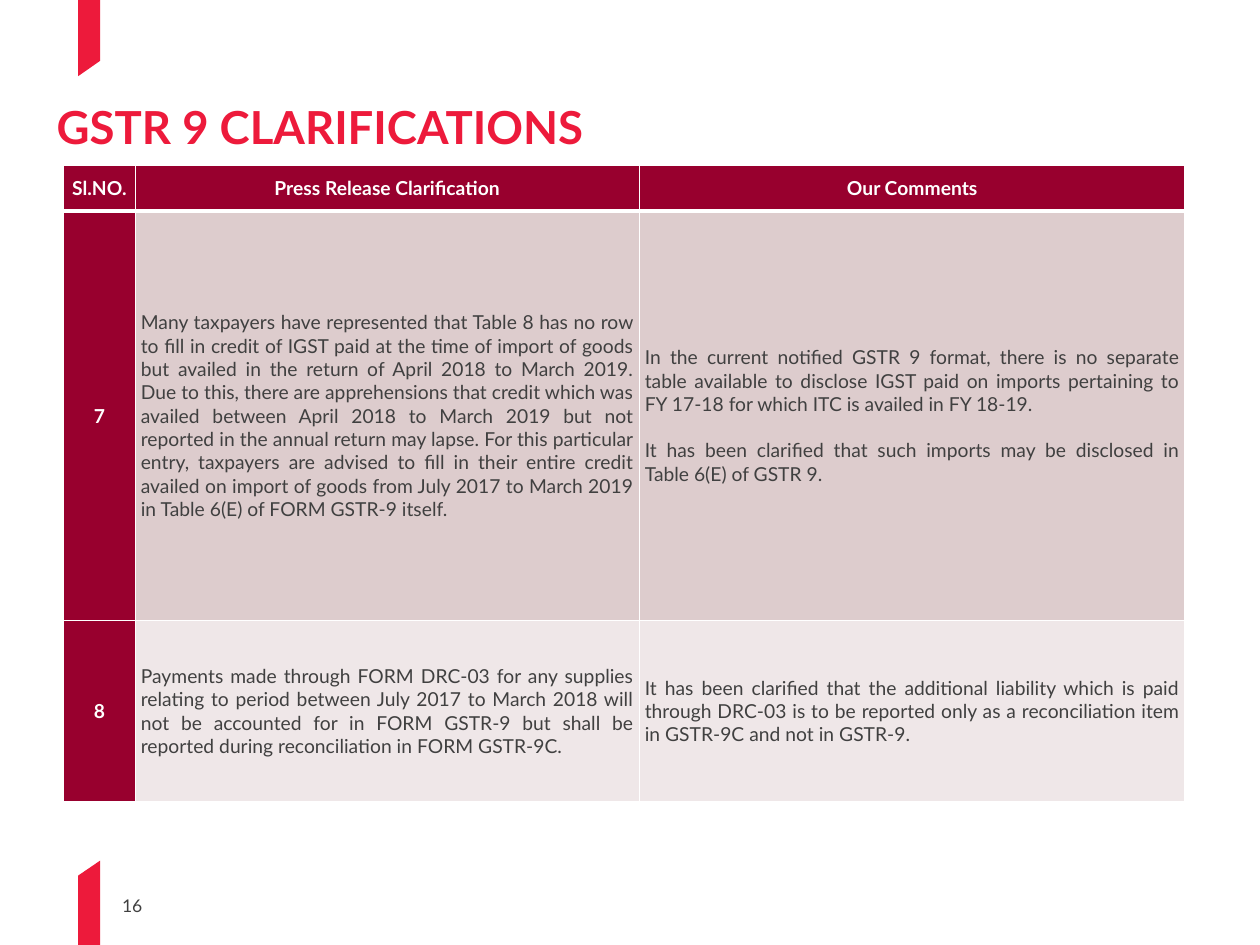
from typing import NamedTuple

from lxml.etree import SubElement
from pptx import Presentation
from pptx.dml.color import RGBColor
from pptx.enum.text import MSO_ANCHOR as Anchor, MSO_AUTO_SIZE as Fit, PP_ALIGN as Align
from pptx.oxml.ns import qn
from pptx.util import Pt

RED = RGBColor(0xED, 0x1A, 0x3B)
WINE = RGBColor(0x98, 0x00, 0x2E)
ROSE = RGBColor(0xDD, 0xCC, 0xCD)
PALE = RGBColor(0xEF, 0xE7, 0xE8)
GREY = RGBColor(0x40, 0x40, 0x40)
WHITE = RGBColor(0xFF, 0xFF, 0xFF)
FONT = "Lato"
SIZE = 11
LINE = 13.2
WIDTHS = (41, 288, 312)


class Row(NamedTuple):
    number: str
    release: list[str]
    comment: list[str]
    height: float
    tint: RGBColor


class Bar(NamedTuple):
    """Accent strip: outer edge, then the slanted edge's left and right ends."""
    edge: float
    left: float
    right: float


HEAD = Row("Sl.NO.", ["Press Release Clarification"], ["Our Comments"], 26, WINE)
ROWS = [
    Row("7",
        ["Many taxpayers have represented that Table 8 has no row to fill in "
         "credit of IGST paid at the time of import of goods but availed in the "
         "return of April 2018 to March 2019. Due to this, there are "
         "apprehensions that credit which was availed between April 2018 to "
         "March 2019 but not reported in the annual return may lapse. For this "
         "particular entry, taxpayers are advised to fill in their entire credit "
         "availed on import of goods from July 2017 to March 2019 in Table 6(E) "
         "of FORM GSTR-9 itself."],
        ["In the current notified GSTR 9 format, there is no separate table "
         "available to disclose IGST paid on imports pertaining to FY 17-18 for "
         "which ITC is availed in FY 18-19.",
         "It has been clarified that such imports may be disclosed in "
         "Table 6(E) of GSTR 9."],
        234, ROSE),
    Row("8",
        ["Payments made through FORM DRC-03 for any supplies relating to period "
         "between July 2017 to March 2018 will not be accounted for in FORM "
         "GSTR-9 but shall be reported during reconciliation in FORM GSTR-9C."],
        ["It has been clarified that the additional liability which is paid "
         "through DRC-03 is to be reported only as a reconciliation item in "
         "GSTR-9C and not in GSTR-9."],
        103.5, PALE),
]
BARS = [Bar(540, 500.4, 491.8), Bar(0, 43.6, 34.8)]


def style(para, size: float, color: RGBColor, bold: bool = False) -> None:
    font = para.font
    font.name, font.size, font.bold = FONT, Pt(size), bold
    font.color.rgb = color


def draw_bar(slide, bar: Bar) -> None:
    left, right = Pt(44.6), Pt(57.2)
    pen = slide.shapes.build_freeform(left, Pt(bar.left))
    pen.add_line_segments([(left, Pt(bar.edge)), (right, Pt(bar.edge)),
                           (right, Pt(bar.right))], close=True)
    shape = pen.convert_to_shape()
    shape.shadow.inherit = False
    shape.fill.solid()
    shape.fill.fore_color.rgb = RED
    shape.line.fill.background()


def add_borders(cell, top: float, bottom: float) -> None:
    """Must run before the cell is filled, as lines precede the fill in XML."""
    props = cell._tc.get_or_add_tcPr()
    for side, width in (("L", 1), ("R", 1), ("T", top), ("B", bottom)):
        line = SubElement(props, qn(f"a:ln{side}"), w=str(Pt(width)))
        fill = SubElement(line, qn("a:solidFill"))
        SubElement(fill, qn("a:srgbClr"), val=str(WHITE))


def fill_cell(cell, texts: list[str], tint: RGBColor, strong: bool) -> None:
    cell.fill.solid()
    cell.fill.fore_color.rgb = tint
    cell.vertical_anchor = Anchor.MIDDLE
    cell.margin_left = cell.margin_right = Pt(3.2)
    cell.margin_top = cell.margin_bottom = 0
    frame = cell.text_frame
    for i, text in enumerate(texts):
        para = frame.add_paragraph() if i else frame.paragraphs[0]
        para.text = text
        para.alignment = Align.CENTER if strong else Align.JUSTIFY
        if i:
            para.space_before = Pt(LINE)
        style(para, SIZE, WHITE if strong else GREY, strong)


def draw_table(slide, rows: list[Row]) -> None:
    high = sum(row.height for row in rows)
    table = slide.shapes.add_table(len(rows), len(WIDTHS), Pt(36.3), Pt(94.5),
                                   Pt(sum(WIDTHS)), Pt(high)).table
    for col, width in zip(table.columns, WIDTHS):
        col.width = Pt(width)
    for r, row in enumerate(rows):
        table.rows[r].height = Pt(row.height)
        for c, texts in enumerate(([row.number], row.release, row.comment)):
            cell = table.cell(r, c)
            add_borders(cell, 3 if r == 1 else 1, 3 if r == 0 else 1)
            strong = r == 0 or c == 0
            fill_cell(cell, texts, WINE if strong else row.tint, strong)


def set_title(slide, text: str) -> None:
    title = slide.shapes.title
    title.left, title.top, title.width, title.height = Pt(25.2), Pt(59), Pt(666.7), Pt(25.2)
    frame = title.text_frame
    frame.auto_size, frame.vertical_anchor = Fit.NONE, Anchor.TOP
    para = frame.paragraphs[0]
    para.text = text
    para.alignment, para.line_spacing = Align.LEFT, 0.8
    style(para, 26, RED, True)


def add_number(slide, text: str) -> None:
    frame = slide.shapes.add_textbox(Pt(69.8), Pt(511.2), Pt(32.4), Pt(12.2)).text_frame
    frame.word_wrap, frame.vertical_anchor = True, Anchor.BOTTOM
    frame.margin_left = frame.margin_right = frame.margin_top = frame.margin_bottom = 0
    para = frame.paragraphs[0]
    para.text = text
    style(para, 10, GREY)


def main() -> None:
    deck = Presentation()
    deck.slide_width, deck.slide_height = Pt(720), Pt(540)
    slide = deck.slides.add_slide(deck.slide_layouts.get_by_name("Title Only"))
    for bar in BARS:
        draw_bar(slide, bar)
    add_number(slide, "16")
    set_title(slide, "GSTR 9 CLARIFICATIONS")
    draw_table(slide, [HEAD, *ROWS])
    deck.save("out.pptx")


if __name__ == "__main__":
    main()
